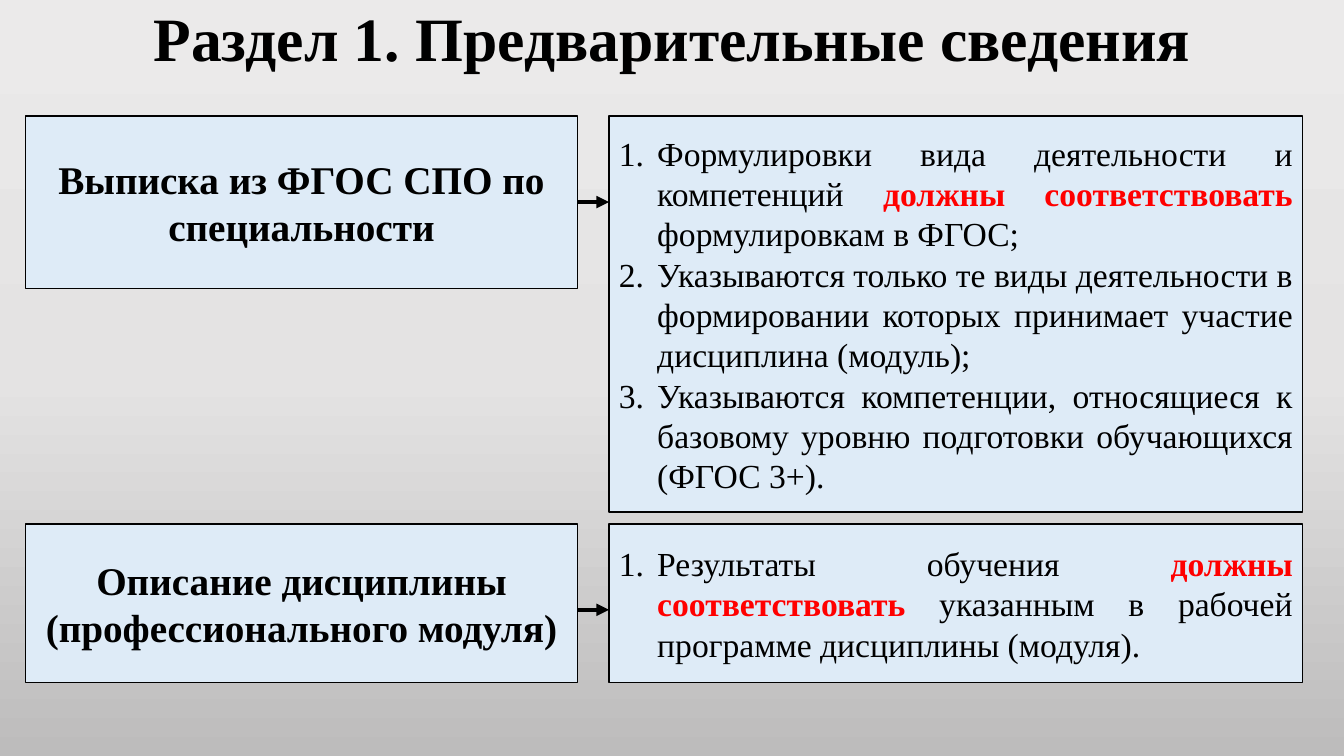
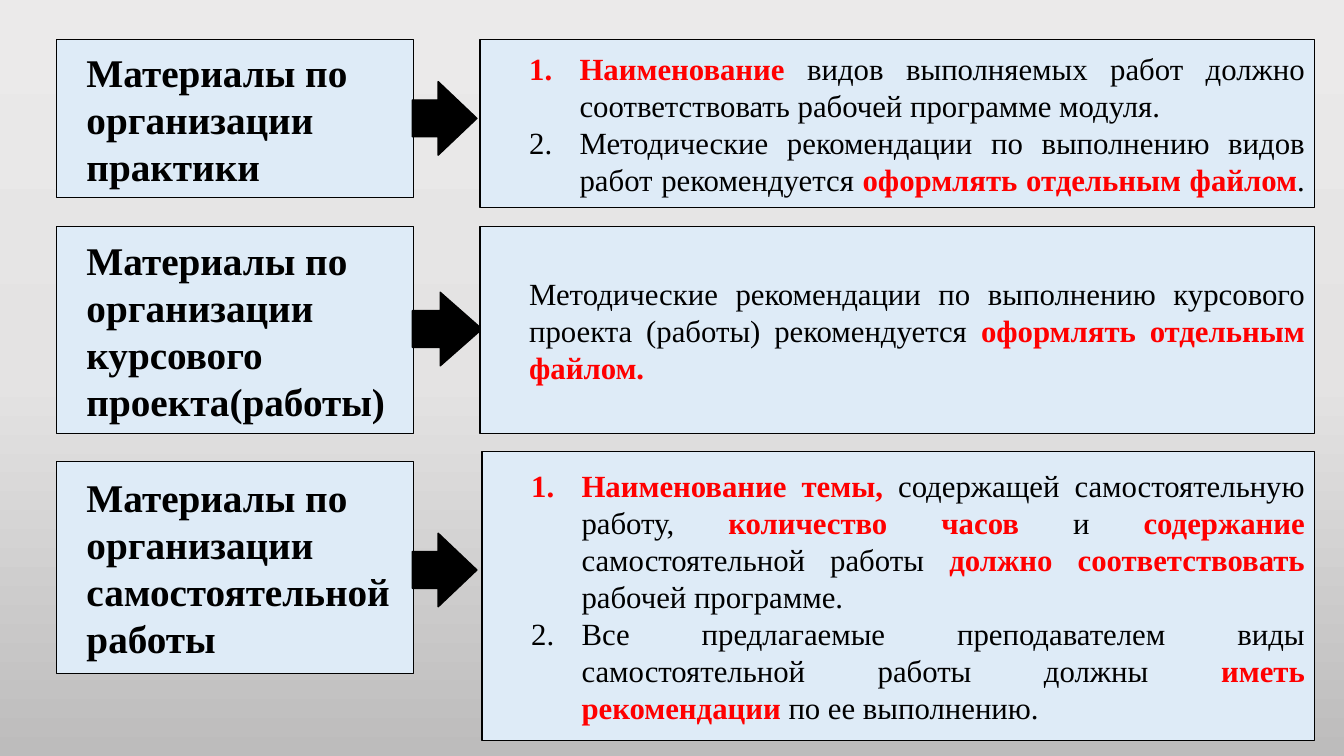
from copy import deepcopy

from pptx import Presentation
from pptx.dml.color import RGBColor
from pptx.enum import shapes, text
from pptx.oxml.ns import qn
from pptx.util import Inches, Pt
from lxml import etree

BLACK = RGBColor(0x00, 0x00, 0x00)
RED = RGBColor(0xFF, 0x00, 0x00)
PALE_BLUE = RGBColor(0xDE, 0xEB, 0xF7)
BACKGROUND = [
    (0, RGBColor(0xEB, 0xEA, 0xEA)),
    (0.5, RGBColor(0xE4, 0xE3, 0xE3)),
    (1, RGBColor(0xBD, 0xBC, 0xBC)),
]
FONT = "Times New Roman"
TITLE_ONLY, BLANK = 5, 6
ALIGN = text.PP_ALIGN


class Deck:
    def __init__(self):
        self.presentation = Presentation()
        self.presentation.slide_width = Inches(13.33)
        self.presentation.slide_height = Inches(7.5)
        self.slide = None
        self.paint_background()

    def paint_background(self):
        master = self.presentation.slide_master
        fill = master.background.fill
        fill.gradient()
        fill.gradient_angle = 270
        stop_list = master.element.find(".//" + qn("a:gsLst"))
        stop_list.append(deepcopy(stop_list[-1]))
        for stop, (position, color) in zip(fill.gradient_stops, BACKGROUND):
            stop.position = position
            stop.color.rgb = color

    def add_slide(self, layout):
        layouts = self.presentation.slide_layouts
        self.slide = self.presentation.slides.add_slide(layouts[layout])

    def title(self, wording):
        title = self.slide.shapes.title
        place = {"left": 0.92, "top": 0, "width": 11.5, "height": 0.82}
        for name, value in place.items():
            setattr(title, name, Inches(value))
        frame = title.text_frame
        frame.auto_size = text.MSO_AUTO_SIZE.NONE
        frame.vertical_anchor = text.MSO_ANCHOR.MIDDLE
        paragraph = frame.paragraphs[0]
        paragraph.alignment = ALIGN.CENTER
        paragraph.line_spacing = 0.9
        self.add_runs(paragraph, wording, 44, bold=True)

    def add_runs(self, paragraph, wording, size, bold=False):
        """Add the wording as runs; parts between asterisks are bold red."""
        for index, part in enumerate(wording.split("*")):
            if not part:
                continue
            marked = index % 2 == 1
            run = paragraph.add_run()
            run.text = part
            run.font.color.rgb = RED if marked else BLACK
            style = {"name": FONT, "size": Pt(size), "bold": bold or marked}
            for name, value in style.items():
                setattr(run.font, name, value)

    def shape(self, kind, place, color):
        shape = self.slide.shapes.add_shape(kind, *map(Inches, place))
        shape.shadow.inherit = False
        shape.fill.solid()
        shape.fill.fore_color.rgb = color
        shape.line.color.rgb = BLACK
        shape.line.width = Pt(1)
        return shape

    def box(self, place, wordings, size, align, indent=0, hanging=0, bold=False):
        """Draw a text box; a hanging indent numbers its paragraphs."""
        box = self.shape(shapes.MSO_SHAPE.RECTANGLE, place, PALE_BLUE)
        frame = box.text_frame
        frame.word_wrap = True
        frame.vertical_anchor = text.MSO_ANCHOR.MIDDLE
        for index, wording in enumerate(wordings):
            paragraph = frame.add_paragraph() if index else frame.paragraphs[0]
            paragraph.alignment = align
            properties = paragraph._p.get_or_add_pPr()
            properties.set("marL", str(Inches(indent)))
            properties.set("indent", str(-Inches(hanging)))
            if hanging:
                number = etree.SubElement(properties, qn("a:buAutoNum"))
                number.set("type", "arabicPeriod")
            self.add_runs(paragraph, wording, size, bold)
        return box

    def heading(self, place, wording, align, indent=0):
        return self.box(place, [wording], 28, align, indent, bold=True)

    def block_arrow(self, place):
        arrow = self.shape(shapes.MSO_SHAPE.RIGHT_ARROW, place, BLACK)
        arrow.adjustments[0] = 0.5
        arrow.adjustments[1] = 0.6

    def line_arrow(self, source, target, y=None):
        """Join two boxes, by default from the middle of the source's side."""
        height = source.top + source.height // 2 if y is None else Inches(y)
        connector = self.slide.shapes.add_connector(
            shapes.MSO_CONNECTOR.STRAIGHT,
            source.left + source.width, height, target.left, height)
        if y is None:
            connector.begin_connect(source, 3)
        connector.line.color.rgb = BLACK
        connector.line.width = Pt(3)
        line = connector.line._get_or_add_ln()
        etree.SubElement(line, qn("a:tailEnd")).set("type", "triangle")
        etree.SubElement(connector._element.spPr, qn("a:effectLst"))


def preliminary_slide(deck):
    deck.add_slide(TITLE_ONLY)
    deck.title("Раздел 1. Предварительные сведения")
    rows = [
        (1.15, 1.71, 3.93, None, "Выписка из ФГОС СПО по специальности", [
            "Формулировки вида деятельности и компетенций "
            "*должны соответствовать *формулировкам в ФГОС;",
            "Указываются только те виды деятельности в формировании которых "
            "принимает участие дисциплина (модуль);",
            "Указываются компетенции, относящиеся к базовому уровню "
            "подготовки обучающихся (ФГОС 3+).",
        ]),
        (5.2, 1.57, 1.57, 6.05, "Описание дисциплины (профессионального модуля)", [
            "Результаты обучения *должны соответствовать* указанным в рабочей "
            "программе дисциплины (модуля).",
        ]),
    ]
    for top, heading_height, rules_height, arrow_y, heading, rules in rows:
        source = deck.heading((0.25, top, 5.48, heading_height), heading, ALIGN.CENTER)
        target = deck.box((6.04, top, 6.88, rules_height), rules, 24,
                          ALIGN.JUSTIFY, 0.38, 0.38)
        deck.line_arrow(source, target, arrow_y)


def materials_slide(deck):
    deck.add_slide(BLANK)
    numbered, plain = (0.89, 0.5), (0.39, 0)
    rows = [
        ("Материалы по организации практики", (0.39, 1.57),
         (0.81, 0.64), (4.76, 0.39, 8.28, 1.67), numbered, [
             "*Наименование* видов выполняемых работ должно соответствовать "
             "рабочей программе модуля.",
             "Методические рекомендации по выполнению видов работ "
             "рекомендуется *оформлять отдельным файлом*. ",
         ]),
        ("Материалы по организации курсового проекта(работы)", (2.25, 2.05),
         (2.9, 0.69), (4.76, 2.25, 8.28, 2.05), plain, [
             "Методические рекомендации по выполнению курсового проекта "
             "(работы) рекомендуется *оформлять отдельным файлом. *",
         ]),
        ("Материалы по организации самостоятельной работы", (4.58, 2.1),
         (5.29, 0.64), (4.78, 4.48, 8.26, 2.87), numbered, [
             "*Наименование темы, *содержащей самостоятельную работу, "
             "*количество часов *и *содержание* самостоятельной работы "
             "*должно соответствовать *рабочей программе.",
             "Все предлагаемые преподавателем виды самостоятельной работы "
             "должны *иметь рекомендации *по ее выполнению.",
         ]),
    ]
    for heading, (top, height), (arrow_top, arrow_width), place, indents, rules in rows:
        deck.heading((0.56, top, 3.54, height), heading, ALIGN.LEFT, 0.2)
        deck.block_arrow((4.09, arrow_top, arrow_width, 0.73))
        deck.box(place, rules, 22, ALIGN.JUSTIFY, *indents)


def main():
    deck = Deck()
    preliminary_slide(deck)
    materials_slide(deck)
    deck.presentation.save("out.pptx")


if __name__ == "__main__":
    main()
